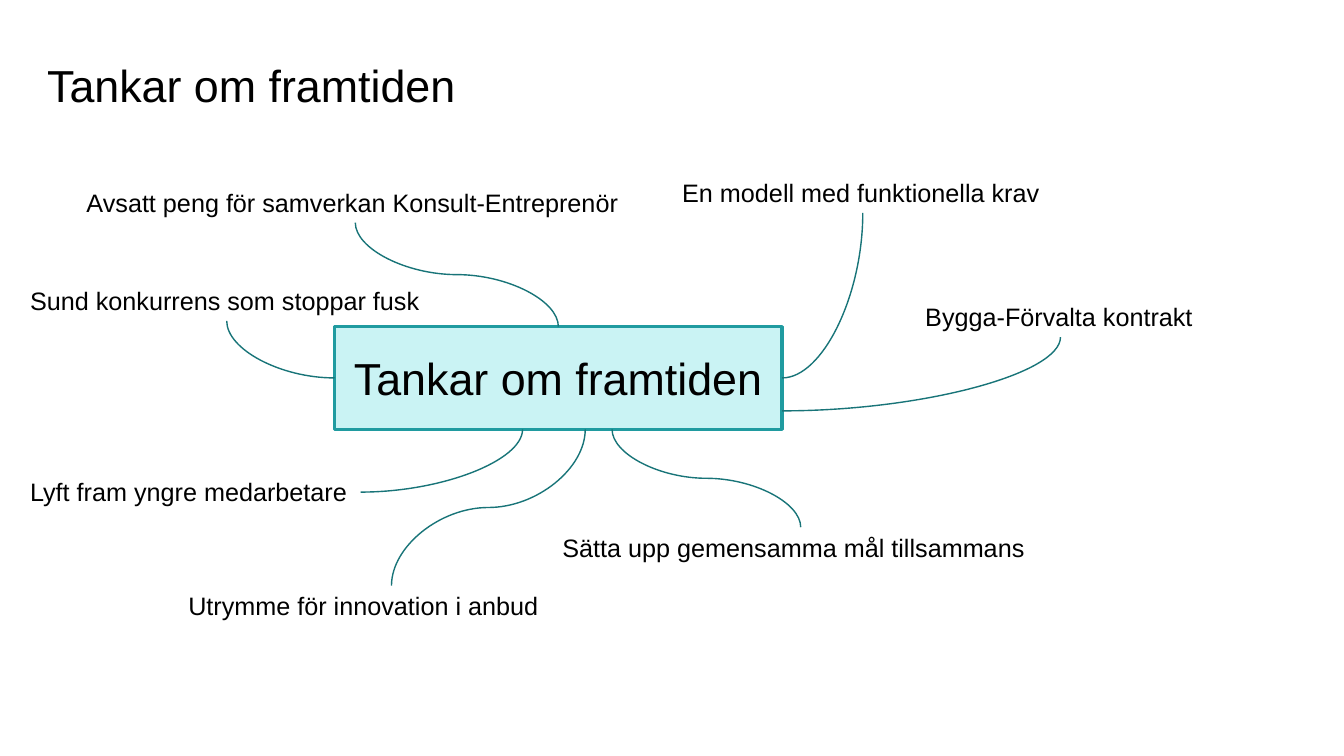
from pptx import Presentation
from pptx.dml.color import RGBColor
from pptx.enum import shapes, text
from pptx.oxml.ns import qn
from pptx.util import Pt
from lxml import etree

COLORS = {"text": "000000", "fill": "CAF3F4", "border": "209BA0", "curve": "187478"}
HEADING = "Tankar om framtiden"
TITLE = (26.6, 21.6, 650.2, 77)
HUB = (239, 233.3, 319.7, 73.4)
LABEL_HEIGHT = 29.1
LABELS = [
    {"text": "En modell med funktionella krav", "at": (480.2, 123.1), "width": 272.2,
     "label_end": (0.5, 1), "hub_end": (1, 0.5), "bend": "corner"},
    {"text": "Sätta upp gemensamma mål tillsammans", "at": (394.6, 376.6), "width": 347.8,
     "label_end": (0.51, 0), "hub_end": (0.62, 1), "bend": "wave"},
    {"text": "Bygga-Förvalta kontrakt", "at": (653.8, 211.7), "width": 207.4,
     "label_end": (0.5, 1), "hub_end": (1, 0.82), "bend": "corner"},
    {"text": "Utrymme för innovation i anbud", "at": (127.4, 418.3), "width": 267.1,
     "label_end": (0.57, 0), "hub_end": (0.56, 1), "bend": "wave"},
    {"text": "Avsatt peng för samverkan Konsult-Entreprenör", "at": (54.7, 129.9), "width": 398.2,
     "label_end": (0.5, 1), "hub_end": (0.5, 0), "bend": "wave"},
    {"text": "Lyft fram yngre medarbetare", "at": (14.4, 337), "width": 243.2,
     "label_end": (1, 0.5), "hub_end": (0.42, 1), "bend": "corner"},
    {"text": "Sund konkurrens som stoppar fusk", "at": (14.4, 200.2), "width": 295.2,
     "label_end": (0.5, 1), "hub_end": (0, 0.5), "bend": "corner"},
]


def color(name):
    return RGBColor.from_string(COLORS[name])


def write(sp, words, size, align, frame):
    tf = sp.text_frame
    for name, value in frame.items():
        setattr(tf, name, value)
    p = tf.paragraphs[0]
    p.alignment = align
    r = p.add_run()
    r.text = words
    for name, value in {"name": "Arial", "size": Pt(size)}.items():
        setattr(r.font, name, value)
    r.font.color.rgb = color("text")


def point_on(box, fraction):
    x, y, w, h = box
    return x + w * fraction[0], y + h * fraction[1]


def add_curve(s, ends, bend):
    (x1, y1), (x2, y2) = ends
    if bend == "wave":
        mid_x, mid_y = (x1 + x2) / 2, (y1 + y2) / 2
        half_w, half_h = (y2 - y1) / 2, (x2 - x1) / 2
        x1, x2 = mid_x - half_w, mid_x + half_w
        y1, y2 = mid_y + half_h, mid_y - half_h
    line = s.shapes.add_connector(shapes.MSO_CONNECTOR.CURVE, *map(Pt, (x1, y1, x2, y2)))
    line.line.color.rgb = color("curve")
    line.line.width = Pt(1)
    props = line._element.spPr
    etree.SubElement(props, qn("a:effectLst"))
    if bend == "wave":
        props.find(qn("a:xfrm")).set("rot", "5400000")
    else:
        props.find(qn("a:prstGeom")).set("prst", "curvedConnector2")


def main():
    prs = Presentation()
    prs.slide_width, prs.slide_height = Pt(960), Pt(540)
    s = prs.slides.add_slide(prs.slide_layouts[6])
    middle = {"word_wrap": True, "vertical_anchor": text.MSO_ANCHOR.MIDDLE}
    hugging = {"word_wrap": False, "auto_size": text.MSO_AUTO_SIZE.SHAPE_TO_FIT_TEXT}

    title = s.shapes.add_textbox(*map(Pt, TITLE))
    write(title, HEADING, 32, text.PP_ALIGN.LEFT, middle)

    hub = s.shapes.add_shape(shapes.MSO_SHAPE.RECTANGLE, *map(Pt, HUB))
    hub.shadow.inherit = False
    hub.fill.solid()
    hub.fill.fore_color.rgb = color("fill")
    hub.line.color.rgb = color("border")
    hub.line.width = Pt(2.25)
    write(hub, HEADING, 32, text.PP_ALIGN.CENTER, middle)

    for label in LABELS:
        box = (*label["at"], label["width"], LABEL_HEIGHT)
        sp = s.shapes.add_textbox(*map(Pt, box))
        write(sp, label["text"], 18, text.PP_ALIGN.LEFT, hugging)

        ends = [point_on(HUB, label["hub_end"]), point_on(box, label["label_end"])]
        if label["bend"] == "wave":
            ends.sort(key=lambda end: end[1])
        elif label["label_end"][1] == 0.5:
            ends.reverse()
        add_curve(s, ends, label["bend"])

    prs.save("out.pptx")


if __name__ == "__main__":
    main()
